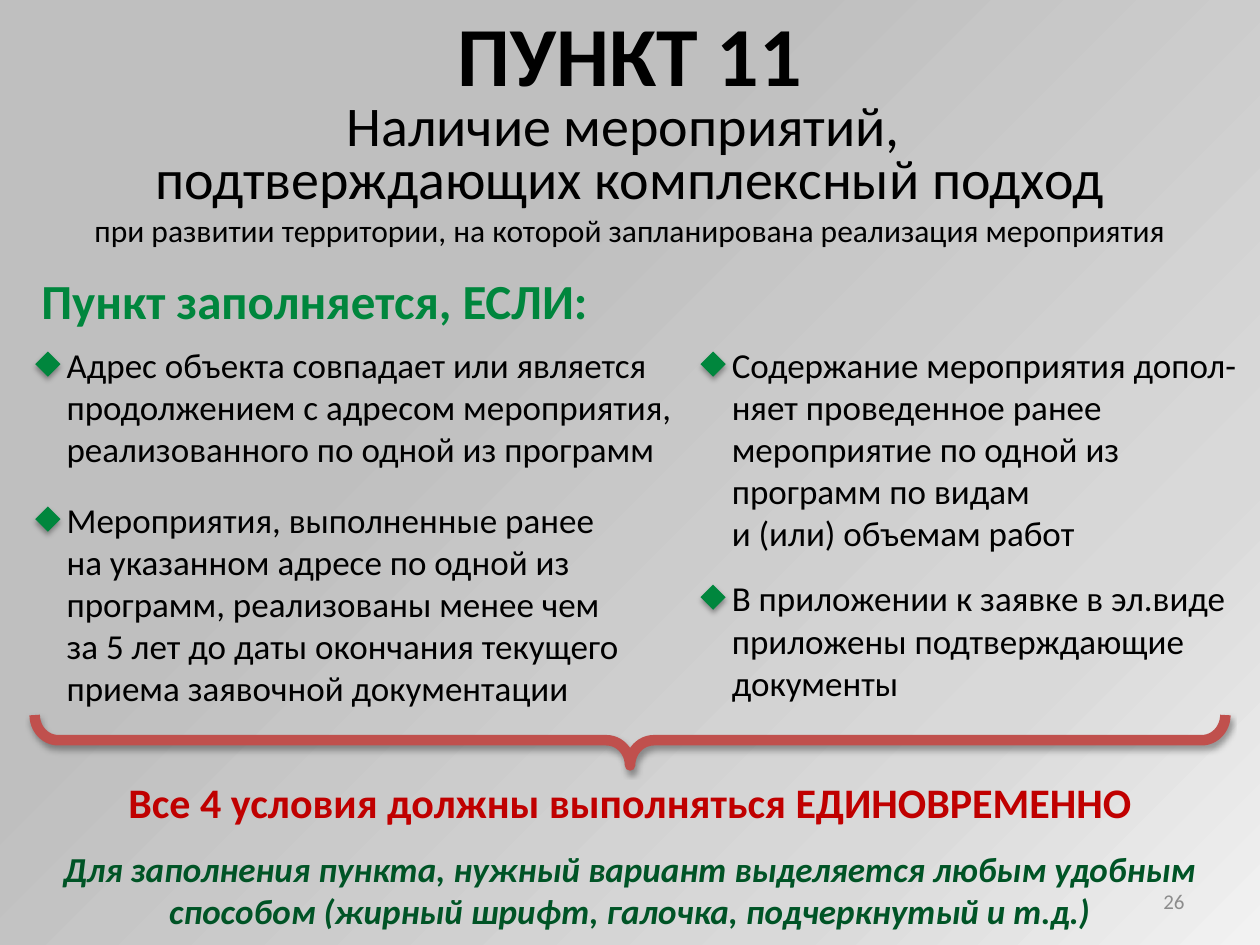
from dataclasses import dataclass

from lxml import etree
from pptx import Presentation
from pptx.dml.color import RGBColor
from pptx.enum.shapes import MSO_SHAPE
from pptx.enum.text import MSO_ANCHOR, PP_ALIGN
from pptx.oxml import parse_xml
from pptx.oxml.ns import qn
from pptx.util import Inches, Pt

DIAMOND, BRACE = MSO_SHAPE.DIAMOND, MSO_SHAPE.RIGHT_BRACE
LEFT, CENTER, RIGHT = PP_ALIGN.LEFT, PP_ALIGN.CENTER, PP_ALIGN.RIGHT
TOP, MIDDLE = MSO_ANCHOR.TOP, MSO_ANCHOR.MIDDLE
NS = "http://schemas.openxmlformats.org/drawingml/2006/main"


@dataclass(frozen=True)
class Theme:
    font: str = "Calibri"
    black: str = "000000"
    green: str = "00863D"
    dark_green: str = "005426"
    red: str = "C00000"
    brace: str = "C0504D"
    gray: str = "8C8C8C"
    backdrop: tuple = ((0, "F2F2F2"), (22, "D9D9D9"), (65, "BFBFBF"))
    title: int = 48
    subtitle: int = 32
    heading: int = 28
    conclusion: int = 24
    body: int = 20
    detail: int = 18
    number: int = 12


THEME = Theme()

TITLE = [
    ("ПУНКТ 11", {"size": THEME.title, "bold": True}, 1),
    ("Наличие мероприятий, ", {"size": THEME.subtitle}, 0.8),
    ("подтверждающих комплексный подход", {"size": THEME.subtitle}, 0.8),
    ("при развитии территории, на которой запланирована реализация мероприятия",
     {"size": THEME.detail}, 1),
]
CONDITIONS = [
    (0.43, 2.68, 5.01, 1.11,
     ["Адрес объекта совпадает или является продолжением с адресом мероприятия, "
      "реализованного по одной из программ"]),
    (0.43, 3.91, 5.01, 1.78,
     ["Мероприятия, выполненные ранее \vна указанном адресе по одной из программ, "
      "реализованы менее чем",
      "за 5 лет до даты окончания текущего приема заявочной документации"]),
    (5.71, 2.68, 4.33, 1.78,
     ["Содержание мероприятия допол-няет проведенное ранее мероприятие "
      "по одной из программ по видам",
      "и (или) объемам работ"]),
    (5.71, 4.53, 4.17, 1.11,
     ["В приложении к заявке в эл.виде приложены подтверждающие документы"]),
]


def set_background(slide):
    stops = "".join(f'<a:gs pos="{pos * 1000}"><a:srgbClr val="{color}"/></a:gs>'
                    for pos, color in THEME.backdrop)
    fill = slide.background.fill
    fill.solid()
    bg_pr = slide.element.cSld.find(qn("p:bg")).find(qn("p:bgPr"))
    bg_pr.replace(bg_pr[0], parse_xml(
        f'<a:gradFill xmlns:a="{NS}" rotWithShape="1"><a:gsLst>{stops}</a:gsLst>'
        '<a:path path="circle"><a:fillToRect l="100000" t="100000"/></a:path>'
        '</a:gradFill>'))


def add_text(slide, box, paragraphs, align=LEFT, anchor=TOP, wrap=True):
    sp = slide.shapes.add_textbox(*map(Inches, box))
    tf = sp.text_frame
    tf.word_wrap = wrap
    tf.vertical_anchor = anchor
    for i, (text, style, spacing) in enumerate(paragraphs):
        p = tf.paragraphs[0] if i == 0 else tf.add_paragraph()
        p.text = text
        p.alignment = align
        p.line_spacing = spacing
        formats = {"name": THEME.font, **style, "size": Pt(style["size"])}
        color = RGBColor.from_string(formats.pop("color", THEME.black))
        for r in p.runs:
            r.font.color.rgb = color
            for name, value in formats.items():
                setattr(r.font, name, value)


def add_shadow(sp):
    sp.shadow.inherit = False
    effects = sp.element.spPr.find(qn("a:effectLst"))
    shadow = etree.SubElement(effects, qn("a:outerShdw"), blurRad=str(Pt(3.1)),
                              dist=str(Pt(1.8)), dir="5400000", rotWithShape="0")
    color = etree.SubElement(shadow, qn("a:srgbClr"), val=THEME.black)
    etree.SubElement(color, qn("a:alpha"), val="35000")


def add_condition(slide, left, top, width, height, texts):
    style = {"size": THEME.body}
    add_text(slide, (left, top, width, height), [(text, style, 1) for text in texts])
    sp = slide.shapes.add_shape(DIAMOND, Inches(left - 0.15), Inches(top + 0.11),
                                Inches(0.2), Inches(0.2))
    sp.fill.solid()
    sp.fill.fore_color.rgb = RGBColor.from_string(THEME.green)
    sp.line.fill.background()
    add_shadow(sp)


def add_brace(slide, left, top, width, height):
    sp = slide.shapes.add_shape(BRACE, *map(Inches, (left, top, width, height)))
    sp.rotation = 90
    sp.adjustments[0] = 0.47
    sp.fill.background()
    sp.line.color.rgb = RGBColor.from_string(THEME.brace)
    sp.line.width = Pt(6)
    add_shadow(sp)


def main():
    prs = Presentation()
    prs.slide_width, prs.slide_height = Inches(10), Inches(7.5)
    slide = prs.slides.add_slide(prs.slide_layouts[6])
    set_background(slide)
    add_text(slide, (0, -0.03, 10, 2.07), TITLE, CENTER)
    heading = {"size": THEME.heading, "color": THEME.green, "bold": True}
    add_text(slide, (0.23, 2.1, 4.58, 0.57),
             [("Пункт заполняется, ЕСЛИ:", heading, 1)], wrap=False)
    for condition in CONDITIONS:
        add_condition(slide, *condition)
    add_brace(slide, 4.8, 1.15, 0.4, 9.45)
    conclusion = {"size": THEME.conclusion, "color": THEME.red, "bold": True}
    add_text(slide, (0.14, 6.11, 9.72, 0.5),
             [("Все 4 условия должны выполняться ЕДИНОВРЕМЕННО", conclusion, 1)], CENTER)
    hint = {"size": THEME.body, "color": THEME.dark_green, "bold": True, "italic": True}
    add_text(slide, (0, 6.68, 10, 0.77),
             [("Для заполнения пункта, нужный вариант выделяется любым удобным способом "
               "(жирный шрифт, галочка, подчеркнутый и т.д.)", hint, 1)], CENTER)
    number = {"size": THEME.number, "color": THEME.gray}
    add_text(slide, (7.17, 6.95, 2.33, 0.4), [("26", number, 1)], RIGHT, MIDDLE)
    prs.save("out.pptx")


if __name__ == "__main__":
    main()
